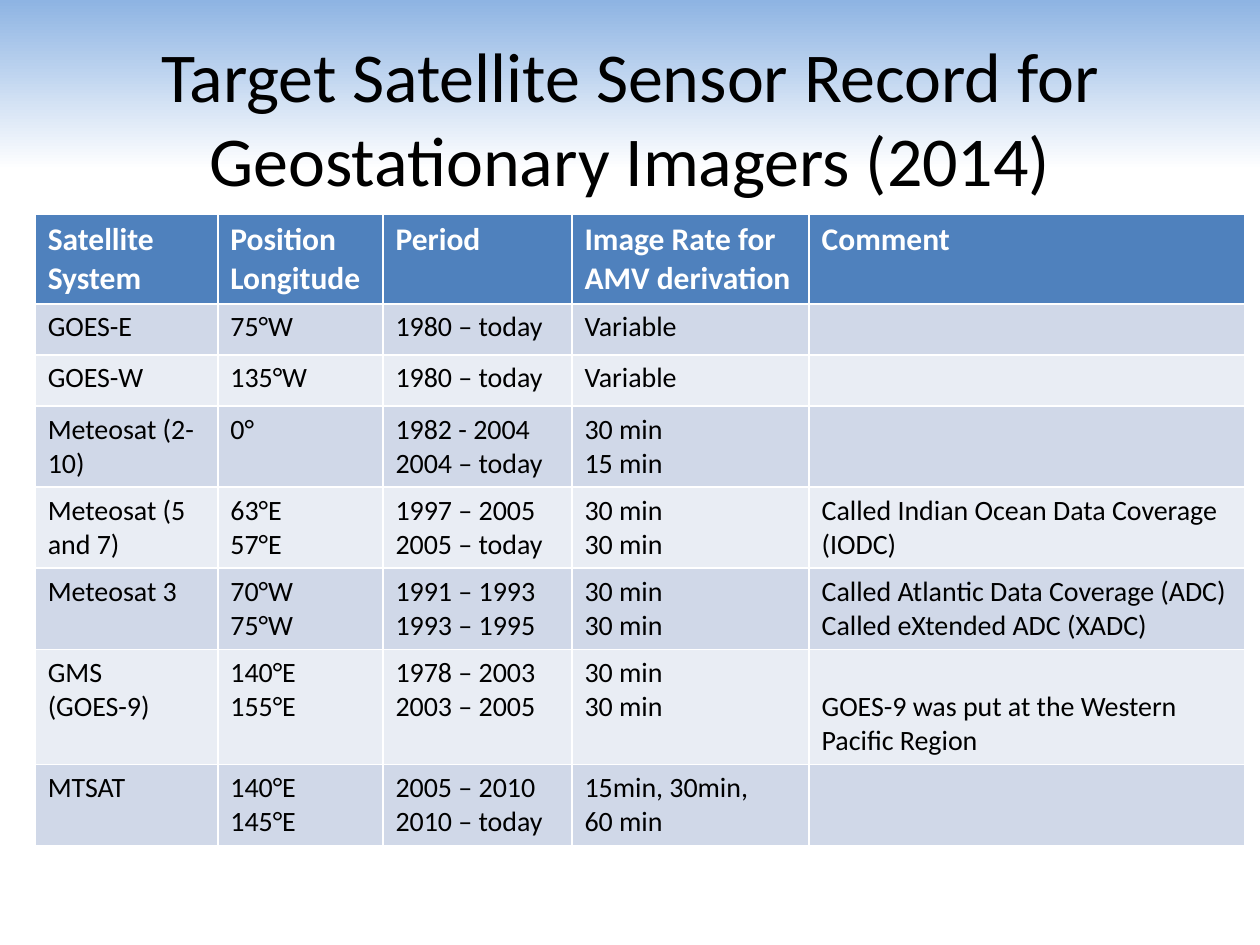
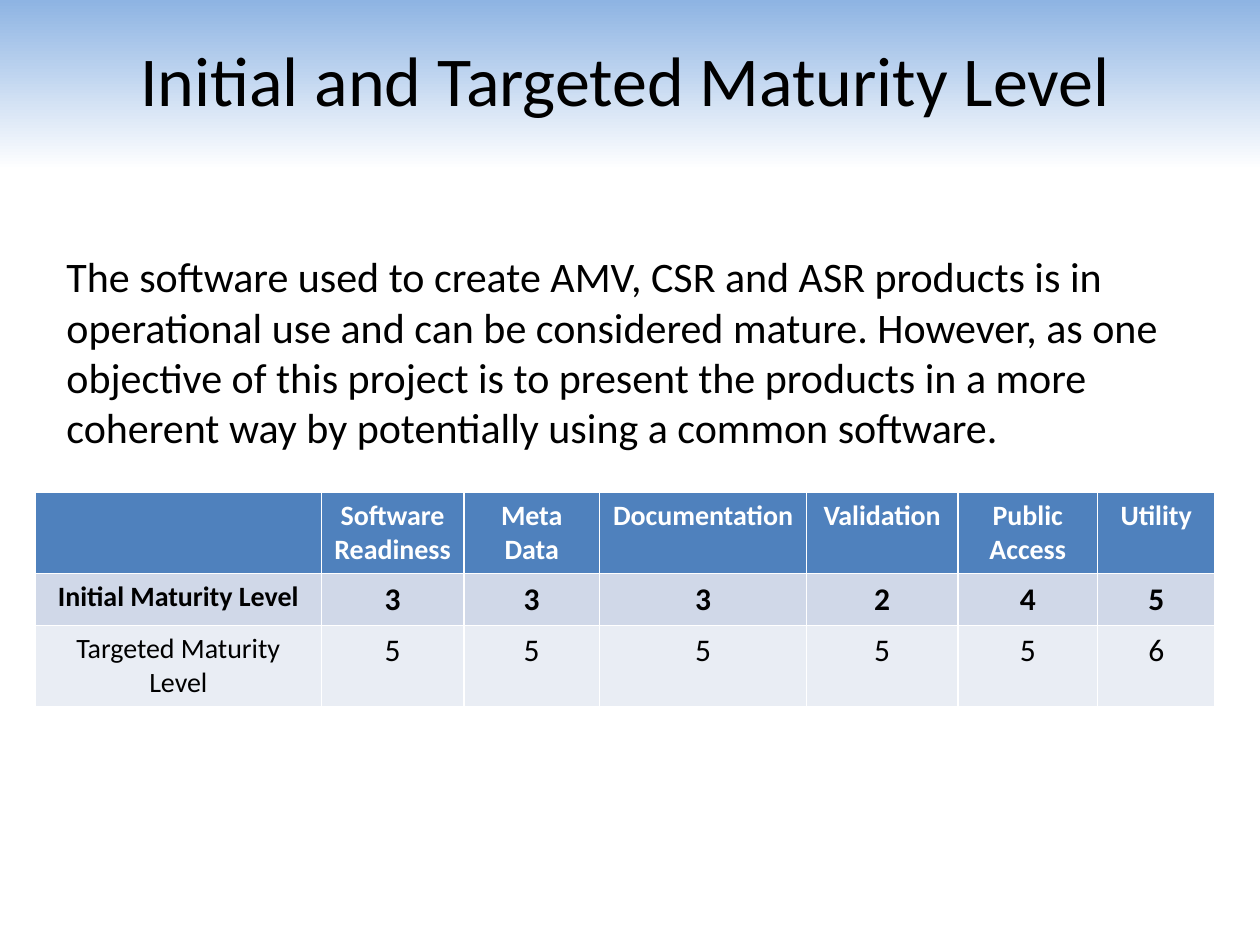
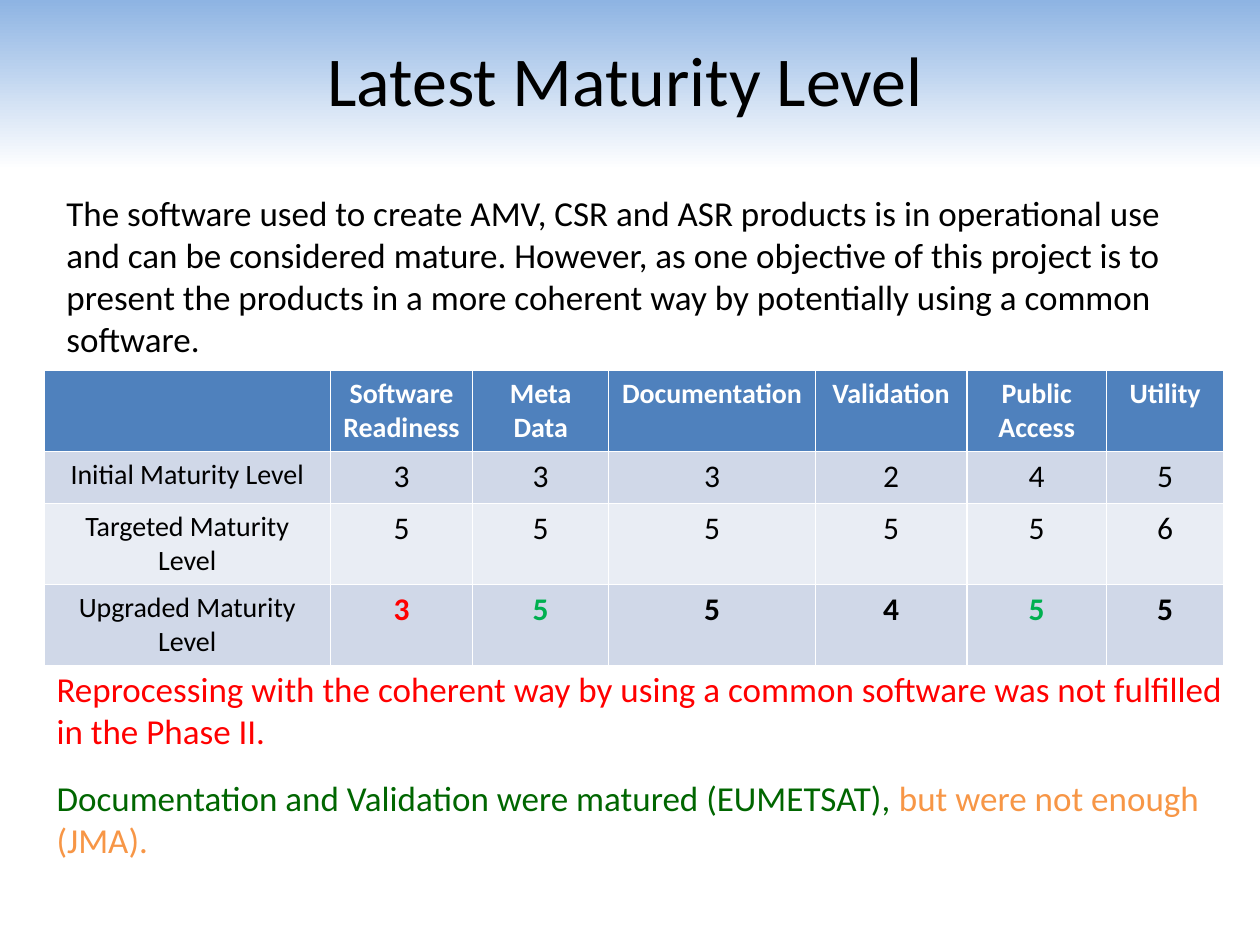
"""Build three slides on satellite imager records and product maturity levels."""
from copy import deepcopy
from dataclasses import dataclass

from pptx import Presentation
from pptx.dml.color import RGBColor
from pptx.enum import text as t
from pptx.oxml.ns import qn
from pptx.util import Cm, Pt


@dataclass(frozen=True)
class Theme:
    """Colours, font and type sizes of the deck."""
    font: str = "Calibri"
    sky: str = "8EB4E3"
    white: str = "FFFFFF"
    black: str = "000000"
    header: str = "4F81BD"
    bands: tuple = ("E9EDF4", "D0D8E8")
    red: str = "FF0000"
    bright_green: str = "00B050"
    dark_green: str = "006600"
    orange: str = "F79646"
    title_size: int = 40
    lead_size: int = 24
    body_size: int = 20
    large_cell: int = 18
    small_cell: int = 16


theme = Theme()


def write(frame, content, size, color=theme.black, bold=False, align=t.PP_ALIGN.LEFT):
    """Fill a text frame, one paragraph a line."""
    frame.word_wrap = True
    frame.text = content
    for paragraph in frame.paragraphs:
        paragraph.alignment = align
        for run in paragraph.runs:
            run.font.color.rgb = RGBColor.from_string(color)
            for name, value in {"name": theme.font, "size": Pt(size), "bold": bold}.items():
                setattr(run.font, name, value)


def add_grid(slide, left, top, widths, heights, rows, sizes, align):
    """Add a banded table; sizes are for header, first column and values."""
    frame = slide.shapes.add_table(len(rows), len(widths), Cm(left), Cm(top),
                                   Cm(sum(widths)), Cm(sum(heights)))
    table = frame.table
    for column, width in zip(table.columns, widths):
        column.width = Cm(width)
    for index, (row, height, values) in enumerate(zip(table.rows, heights, rows)):
        row.height = Cm(height)
        for position, (cell, value) in enumerate(zip(row.cells, values)):
            cell.fill.solid()
            fill = theme.bands[index % 2] if index else theme.header
            cell.fill.fore_color.rgb = RGBColor.from_string(fill)
            size = sizes[0] if index == 0 else sizes[1] if position == 0 else sizes[2]
            if value:
                write(cell.text_frame, value, size, color=theme.black if index else theme.white,
                      bold=index == 0, align=align)
    return table


presentation = Presentation()
presentation.slide_width, presentation.slide_height = Cm(25.4), Cm(19.05)

master = presentation.slide_master
background = master.background.fill
background.gradient()
background.gradient_angle = 270
for stop, color, position in zip(background.gradient_stops, (theme.sky, theme.white), (0, 0.18)):
    stop.color.rgb = RGBColor.from_string(color)
    stop.position = position
stop_list = master.element.find(".//" + qn("a:gsLst"))
last_stop = deepcopy(stop_list[-1])
last_stop.set("pos", "100000")
stop_list.append(last_stop)

titles = [
    ("Target Satellite Sensor Record for Geostationary Imagers (2014)", 1.27, 0.76),
    ("Initial and Targeted Maturity Level", 1.17, 0),
    ("Latest Maturity Level", 1.17, 0),
]
slides = []
for content, left, top in titles:
    slide = presentation.slides.add_slide(presentation.slide_layouts[5])
    title = slide.shapes.title
    place = {"left": left, "top": top, "width": 22.86, "height": 3.18}
    for name, value in place.items():
        setattr(title, name, Cm(value))
    write(title.text_frame, content, theme.title_size, align=t.PP_ALIGN.CENTER)
    title.text_frame.auto_size = t.MSO_AUTO_SIZE.NONE
    title.text_frame.vertical_anchor = t.MSO_ANCHOR.MIDDLE
    slides.append(slide)
record_slide, target_slide, latest_slide = slides

satellites = [
    ("Satellite System", "Position\nLongitude", "Period", "Image Rate for AMV derivation",
     "Comment"),
    ("GOES-E", "75°W", "1980 – today", "Variable", ""),
    ("GOES-W", "135°W", "1980 – today", "Variable", ""),
    ("Meteosat (2-10)", "0°", "1982 - 2004\n2004 – today", "30 min\n15 min", ""),
    ("Meteosat (5 and 7)", "63°E\n57°E", "1997 – 2005\n2005 – today", "30 min\n30 min",
     "Called Indian Ocean Data Coverage (IODC)"),
    ("Meteosat 3", "70°W\n75°W", "1991 – 1993\n1993 – 1995", "30 min\n30 min",
     "Called Atlantic Data Coverage (ADC)\nCalled eXtended ADC (XADC)"),
    ("GMS\n(GOES-9)", "140°E\n155°E", "1978 – 2003\n2003 – 2005", "30 min\n30 min",
     "GOES-9 was put at the Western Pacific Region"),
    ("MTSAT", "140°E\n145°E", "2005 – 2010\n2010 – today", "15min, 30min,\n60 min", ""),
]
record_table = add_grid(
    record_slide, 0.71, 4.32, (3.68, 3.33, 3.81, 4.78, 8.79),
    (1.78, 1.03, 1.03, 1.63, 1.63, 1.63, 2.32, 1.63), satellites,
    (theme.large_cell, theme.small_cell, theme.small_cell), t.PP_ALIGN.LEFT)
record_table.cell(6, 4).vertical_anchor = t.MSO_ANCHOR.BOTTOM

maturity = [
    ("", "Software Readiness", "Meta Data", "Documentation", "Validation", "Public Access",
     "Utility"),
    ("Initial Maturity Level", *"333245"),
    ("Targeted Maturity Level", *"555556"),
    ("Upgraded Maturity Level", *"355455"),
]
maturity_heights = (1.6, 1.04, 1.63, 1.63)
maturity_tables = []
for slide, left, top, count in ((target_slide, 0.71, 9.93, 3), (latest_slide, 0.89, 7.47, 4)):
    maturity_tables.append(add_grid(
        slide, left, top, (5.77, 2.87, 2.74, 4.17, 3.05, 2.82, 2.36),
        maturity_heights[:count], maturity[:count],
        (theme.small_cell, theme.small_cell, theme.large_cell), t.PP_ALIGN.CENTER))
target_table, latest_table = maturity_tables

for cell in target_table.rows[1].cells:
    cell.text_frame.paragraphs[0].runs[0].font.bold = True
upgrade_colors = (theme.red, theme.bright_green, theme.black, theme.black,
                  theme.bright_green, theme.black)
for column, color in enumerate(upgrade_colors, start=1):
    font = latest_table.cell(3, column).text_frame.paragraphs[0].runs[0].font
    font.bold = True
    font.color.rgb = RGBColor.from_string(color)

software_note = (
    "The software used to create AMV, CSR and ASR products is in operational use and can be "
    "considered mature. However, as one objective of this project is to present the products "
    "in a more coherent way by potentially using a common software.")
phase_note = ("Reprocessing with the coherent way by using a common software was not fulfilled "
              "in the Phase II.")
matured_note = "Documentation and Validation were matured (EUMETSAT), "
notes = [
    (target_slide, software_note, (1.09, 4.93, 23.39, 4.37), theme.lead_size, theme.black),
    (latest_slide, software_note, (1.09, 3.73, 23.39, 3.68), theme.body_size, theme.black),
    (latest_slide, phase_note, (0.89, 13.34, 24.03, 1.96), theme.body_size, theme.red),
    (latest_slide, matured_note, (0.89, 15.52, 24.21, 1.96), theme.body_size, theme.dark_green),
]
for slide, content, place, size, color in notes:
    box = slide.shapes.add_textbox(*map(Cm, place))
    write(box.text_frame, content, size, color)

shortfall = box.text_frame.paragraphs[0].add_run()
shortfall.text = "but were not enough (JMA)."
shortfall.font.name = theme.font
shortfall.font.size = Pt(theme.body_size)
shortfall.font.color.rgb = RGBColor.from_string(theme.orange)

presentation.save("out.pptx")
